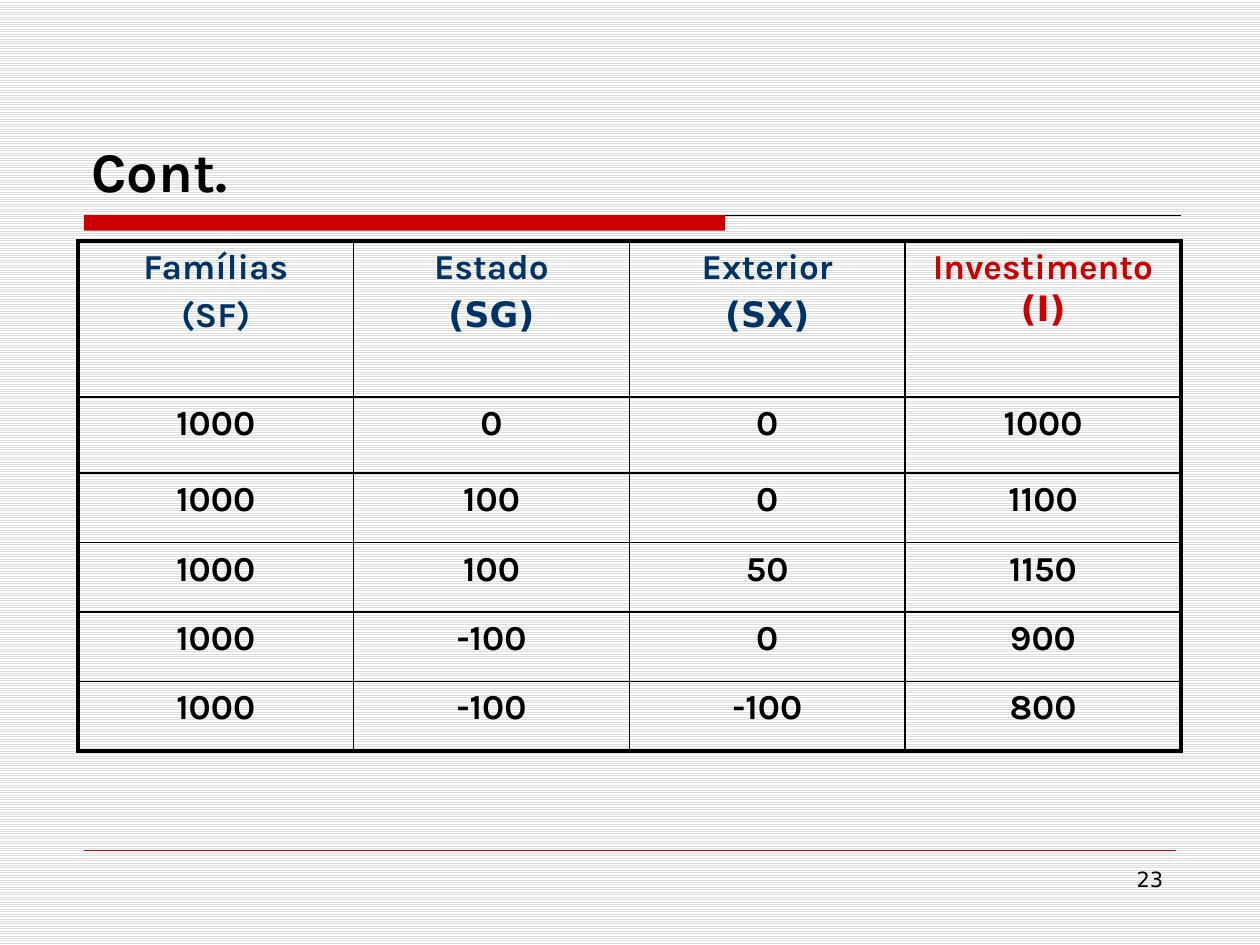
"""Build the slide with the table of savings by sector and investment."""
import pptx
import pptx.util
import pptx.dml.color
import pptx.enum.dml
import pptx.enum.shapes
import pptx.enum.text
import pptx.oxml
import pptx.oxml.ns
from pptx.util import Cm, Pt

BLACK = pptx.dml.color.RGBColor(0x00, 0x00, 0x00)
WHITE = pptx.dml.color.RGBColor(0xFF, 0xFF, 0xFF)
GREY = pptx.dml.color.RGBColor(0xDD, 0xDD, 0xDD)
RED = pptx.dml.color.RGBColor(0xCC, 0x00, 0x00)
NAVY = pptx.dml.color.RGBColor(0x00, 0x33, 0x66)
HEADING_FONT = "Karla"
PLAIN_FONT = "DejaVu Sans"
CENTER = pptx.enum.text.PP_ALIGN.CENTER

HEADER = [
    [[("Famílias", HEADING_FONT)], [("(SF)", HEADING_FONT)]],
    [[("Estado", HEADING_FONT)], [("(SG)", PLAIN_FONT)]],
    [[("Exterior", HEADING_FONT)], [("(SX)", PLAIN_FONT)]],
    [[("Investimento", HEADING_FONT), (" (I)", PLAIN_FONT)]],
]
VALUES = [
    (1000, 0, 0, 1000),
    (1000, 100, 0, 1100),
    (1000, 100, 50, 1150),
    (1000, -100, 0, 900),
    (1000, -100, -100, 800),
]
ROW_HEIGHTS = [3.14, 1.54, 1.4, 1.4, 1.4, 1.4]


def add_run(paragraph, text, font_name, size, color, bold=True):
    run = paragraph.add_run()
    run.text = text
    run.font.name = font_name
    run.font.size = Pt(size)
    run.font.bold = bold
    run.font.color.rgb = color


def set_border(cell, side, width):
    cell._tc.get_or_add_tcPr().append(pptx.oxml.parse_xml(
        f'<a:ln{side} {pptx.oxml.ns.nsdecls("a")} w="{Pt(width)}">'
        f'<a:solidFill><a:srgbClr val="{BLACK}"/></a:solidFill></a:ln{side}>'))


presentation = pptx.Presentation()
presentation.slide_width = Cm(25.4)
presentation.slide_height = Cm(19.05)
slide = presentation.slides.add_slide(presentation.slide_layouts[5])

background = slide.background.fill
background.patterned()
background.pattern = pptx.enum.dml.MSO_PATTERN.LIGHT_HORIZONTAL
background.fore_color.rgb = GREY
background.back_color.rgb = WHITE

title = slide.shapes.title
title.left, title.top, title.width, title.height = Cm(1.59), Cm(0.85), Cm(22.22), Cm(3.38)
title.text_frame.vertical_anchor = pptx.enum.text.MSO_ANCHOR.BOTTOM
title_paragraph = title.text_frame.paragraphs[0]
title_paragraph.alignment = pptx.enum.text.PP_ALIGN.LEFT
add_run(title_paragraph, "Cont.", HEADING_FONT, 32, BLACK)

for end, y, color, width in [(23.81, 4.34, BLACK, 0.75), (23.7, 17.15, RED, 0.25)]:
    rule = slide.shapes.add_connector(
        pptx.enum.shapes.MSO_CONNECTOR.STRAIGHT, Cm(1.69), Cm(y), Cm(end), Cm(y))
    rule.line.color.rgb = color
    rule.line.width = Pt(width)
    rule._element.spPr.append(pptx.oxml.parse_xml(
        f'<a:effectLst {pptx.oxml.ns.nsdecls("a")}/>'))

title_bar = slide.shapes.add_shape(
    pptx.enum.shapes.MSO_SHAPE.RECTANGLE, Cm(1.69), Cm(4.34), Cm(12.93), Cm(0.31))
title_bar.shadow.inherit = False
title_bar.fill.solid()
title_bar.fill.fore_color.rgb = RED
title_bar.line.fill.background()

table = slide.shapes.add_table(
    len(ROW_HEIGHTS), len(HEADER), Cm(1.57), Cm(4.86), Cm(22.24), Cm(sum(ROW_HEIGHTS))).table
table.first_row = False
table.horz_banding = False
for column in table.columns:
    column.width = Cm(5.56)
for row, height in zip(table.rows, ROW_HEIGHTS):
    row.height = Cm(height)

value_rows = [[[[(str(value), HEADING_FONT)]] for value in row] for row in VALUES]
last_row, last_column = len(VALUES), len(HEADER) - 1
for row_index, row in enumerate([HEADER] + value_rows):
    for column_index, lines in enumerate(row):
        cell = table.cell(row_index, column_index)
        outer_sides = {"L": column_index == 0, "R": column_index == last_column,
                       "T": row_index == 0, "B": row_index == last_row}
        for side, is_outer in outer_sides.items():
            set_border(cell, side, 2.25 if is_outer else 1)
        cell.fill.background()
        if row_index > 0:
            color = BLACK
        else:
            color = RED if column_index == last_column else NAVY
        for line_index, runs in enumerate(lines):
            if line_index == 0:
                paragraph = cell.text_frame.paragraphs[0]
            else:
                paragraph = cell.text_frame.add_paragraph()
                paragraph.space_before = Pt(4)
            paragraph.alignment = CENTER
            for text, font_name in runs:
                add_run(paragraph, text, font_name, 20, color)

page_number = slide.shapes.add_textbox(Cm(18.2), Cm(17.35), Cm(5.5), Cm(1.32))
page_number.text_frame.word_wrap = True
number_paragraph = page_number.text_frame.paragraphs[0]
number_paragraph.alignment = pptx.enum.text.PP_ALIGN.RIGHT
add_run(number_paragraph, "23", PLAIN_FONT, 12, BLACK, bold=False)

presentation.save("out.pptx")
